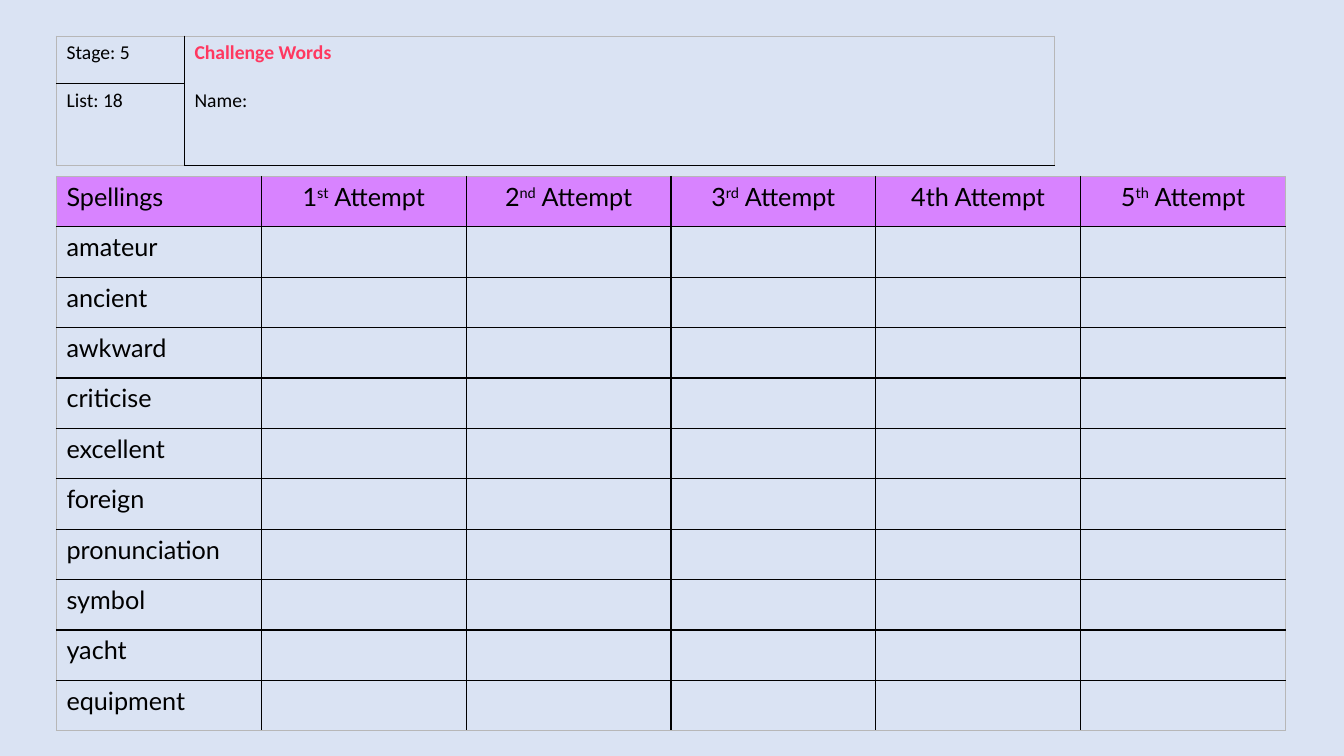
import pptx
import pptx.dml.color
import pptx.enum.text
import pptx.oxml.ns
import pptx.util
from lxml import etree

Inches = pptx.util.Inches
RGBColor = pptx.dml.color.RGBColor

BACKGROUND = RGBColor(0xDA, 0xE3, 0xF3)
HEADER = RGBColor(0xD8, 0x83, 0xFF)
CHALLENGE = RGBColor(0xFF, 0x38, 0x60)
BLACK = RGBColor(0, 0, 0)
EDGE = RGBColor(0xB7, 0xB7, 0xB7)

WORDS = ["amateur", "ancient", "awkward", "criticise", "excellent",
         "foreign", "pronunciation", "symbol", "yacht", "equipment"]
# Number, ending and whether the ending is raised
ATTEMPTS = [("1", "st", True), ("2", "nd", True), ("3", "rd", True),
            ("4", "th", False), ("5", "th", True)]


def add_border(cell, side, color):
    tag = pptx.oxml.ns.qn
    ln = etree.SubElement(cell._tc.get_or_add_tcPr(), tag("a:" + side), w="12700")
    fill = etree.SubElement(ln, tag("a:solidFill"))
    etree.SubElement(fill, tag("a:srgbClr"), val=str(color))


def add_grid(s, left, top, widths, heights):
    """Add an unfilled table with black inner lines and a grey outer edge."""
    rows, cols = len(heights), len(widths)
    table = s.shapes.add_table(rows, cols, Inches(left), Inches(top),
                               Inches(sum(widths)), Inches(sum(heights))).table
    table.first_row = table.horz_banding = False
    for column, width in zip(table.columns, widths):
        column.width = Inches(width)
    for row, height in zip(table.rows, heights):
        row.height = Inches(height)
    for i in range(rows):
        for j in range(cols):
            cell = table.cell(i, j)
            outer = {"lnL": j == 0, "lnR": j == cols - 1,
                     "lnT": i == 0, "lnB": i == rows - 1}
            for side, is_outer in outer.items():
                add_border(cell, side, EDGE if is_outer else BLACK)
            cell.fill.background()
    return table


def set_font(p, name, size, color=BLACK, bold=False):
    p.font.name = name
    p.font.size = pptx.util.Pt(size)
    p.font.color.rgb = color
    p.font.bold = bold


def add_list_details(s, left, top):
    table = add_grid(s, left, top, [1.27, 8.63], [0.47, 0.81])
    table.cell(0, 1).merge(table.cell(1, 1))
    for i, text in enumerate(["Stage: 5", "List: 18"]):
        p = table.cell(i, 0).text_frame.paragraphs[0]
        p.text = text
        set_font(p, "Calibri", 14)

    # Title and name
    tf = table.cell(0, 1).text_frame
    p = tf.paragraphs[0]
    p.text = "Challenge Words"
    set_font(p, "Calibri", 14, CHALLENGE, True)
    p = tf.add_paragraph()
    p.text = "Name:"
    p.space_before = pptx.util.Pt(17)
    set_font(p, "Calibri", 14)


def add_spelling_grid(s, left, top, width, height):
    cols, rows = len(ATTEMPTS) + 1, len(WORDS) + 1
    table = add_grid(s, left, top, [width / cols] * cols, [height / rows] * rows)

    # Word column
    for i, word in enumerate(["Spellings"] + WORDS):
        p = table.cell(i, 0).text_frame.paragraphs[0]
        p.text = word
        set_font(p, "Lato", 18)

    # Header row
    for j in range(cols):
        cell = table.cell(0, j)
        cell.fill.solid()
        cell.fill.fore_color.rgb = HEADER
    for j, (number, ending, raised) in enumerate(ATTEMPTS, 1):
        p = table.cell(0, j).text_frame.paragraphs[0]
        p.alignment = pptx.enum.text.PP_ALIGN.CENTER
        set_font(p, "Lato", 18)
        if raised:
            for text in (number, ending, " Attempt"):
                r = p.add_run()
                r.text = text
                if text == ending:
                    r.font._element.set("baseline", "30000")
        else:
            p.add_run().text = number + ending + " Attempt"


def main():
    prs = pptx.Presentation()
    prs.slide_width, prs.slide_height = Inches(13.33), Inches(7.5)
    s = prs.slides.add_slide(prs.slide_layouts[6])
    s.background.fill.solid()
    s.background.fill.fore_color.rgb = BACKGROUND
    add_spelling_grid(s, 0.56, 1.75, 12.19, 5.5)
    add_list_details(s, 0.56, 0.36)
    prs.save("out.pptx")


if __name__ == "__main__":
    main()
